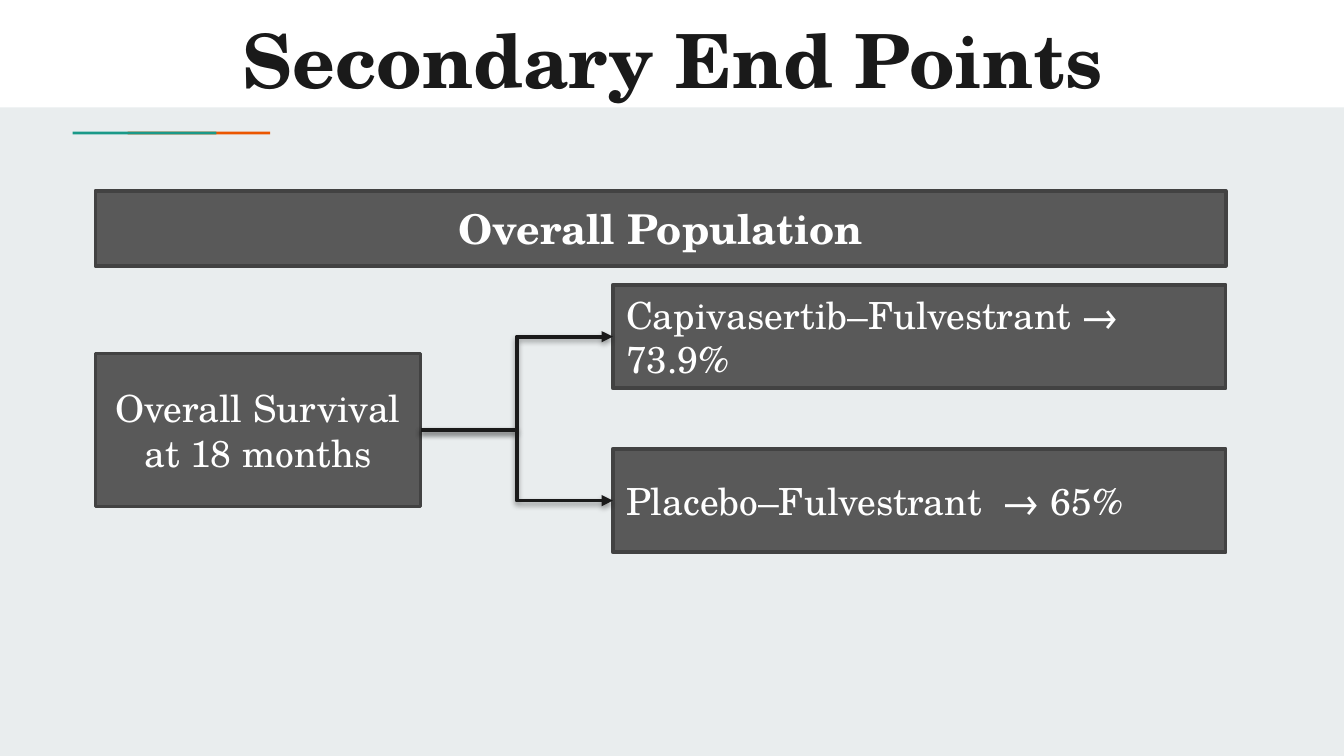
"""Build the slide of secondary end points with its overall survival branches."""
from lxml.etree import SubElement
from pptx import Presentation
from pptx.dml.color import RGBColor
from pptx.enum.shapes import MSO_CONNECTOR as Connector, MSO_SHAPE as Shape
from pptx.enum.text import MSO_ANCHOR as Anchor, PP_ALIGN as Align
from pptx.oxml.ns import qn
from pptx.util import Inches, Pt

COLORS = {
    "background": "E9EDEE",
    "band": "FFFFFF",
    "orange": "EB5600",
    "teal": "1A9988",
    "box": "595959",
    "border": "424242",
    "dark": "1A1A1A",
    "light": "FFFFFF",
}
FONT = "TeX Gyre Schola"


def color(name):
    return RGBColor.from_string(COLORS[name])


def write_text(shape, text, size=20, fill="light", bold=False,
               align=Align.CENTER, anchor=Anchor.MIDDLE):
    frame = shape.text_frame
    frame.word_wrap = True
    frame.vertical_anchor = anchor
    paragraph = frame.paragraphs[0]
    paragraph.alignment = align
    run = paragraph.add_run()
    run.text = text
    run.font.name = FONT
    run.font.size = Pt(size)
    run.font.bold = bold
    run.font.color.rgb = color(fill)


class SlideBuilder:
    def __init__(self, presentation):
        self.slide = presentation.slides.add_slide(presentation.slide_layouts[5])
        self.slide.background.fill.solid()
        self.slide.background.fill.fore_color.rgb = color("background")

    def bar(self, left, top, width, height, fill):
        shape = self.slide.shapes.add_shape(
            Shape.RECTANGLE, Inches(left), Inches(top), Inches(width), Inches(height))
        shape.shadow.inherit = False
        shape.fill.solid()
        shape.fill.fore_color.rgb = color(fill)
        shape.line.fill.background()
        return shape

    def title(self, text):
        title = self.slide.shapes.title
        title.left, title.top = Inches(0.8), Inches(0)
        title.width, title.height = Inches(8.41), Inches(0.9)
        title.text_frame.margin_top = title.text_frame.margin_bottom = Inches(0.1)
        write_text(title, text, size=40, fill="dark", bold=True, anchor=Anchor.TOP)
        tree = self.slide.shapes.element
        tree.remove(title.element)
        tree.append(title.element)

    def box(self, left, top, width, height, text, **text_format):
        shape = self.bar(left, top, width, height, "box")
        shape.line.color.rgb = color("border")
        shape.line.width = Pt(2)
        write_text(shape, text, **text_format)
        return shape

    def arrow(self, source, target):
        connector = self.slide.shapes.add_connector(Connector.ELBOW, 0, 0, 0, 0)
        connector.begin_connect(source, 3)
        connector.end_connect(target, 1)
        connector.line.color.rgb = color("dark")
        connector.line.width = Pt(2)
        properties = connector.element.spPr
        SubElement(properties.find(qn("a:ln")), qn("a:tailEnd"), type="triangle")
        effects = SubElement(properties, qn("a:effectLst"))
        shadow = SubElement(effects, qn("a:outerShdw"), blurRad=str(Pt(3.1)),
                            dist=str(Pt(1.6)), dir="5400000", rotWithShape="0")
        shade = SubElement(shadow, qn("a:srgbClr"), val="000000")
        SubElement(shade, qn("a:alpha"), val="38000")


def main():
    presentation = Presentation()
    presentation.slide_width = Inches(10)
    presentation.slide_height = Inches(10) * 9 // 16
    builder = SlideBuilder(presentation)

    builder.bar(0, 0, 10, 0.8, "band")
    builder.bar(0.95, 0.98, 1.06, 0.02, "orange")
    builder.bar(0.54, 0.98, 1.07, 0.02, "teal")
    builder.title("Secondary End Points")

    survival = builder.box(0.71, 2.63, 2.42, 1.14, "Overall Survival at 18 months")
    arms = [(2.12, "Capivasertib–Fulvestrant → 73.9%"),
            (3.34, "Placebo–Fulvestrant  → 65%")]
    for top, text in arms:
        arm = builder.box(4.56, top, 4.56, 0.77, text, align=Align.LEFT)
        builder.arrow(survival, arm)
    builder.box(0.71, 1.42, 8.41, 0.56, "Overall Population", size=22, bold=True)

    presentation.save("out.pptx")


if __name__ == "__main__":
    main()
